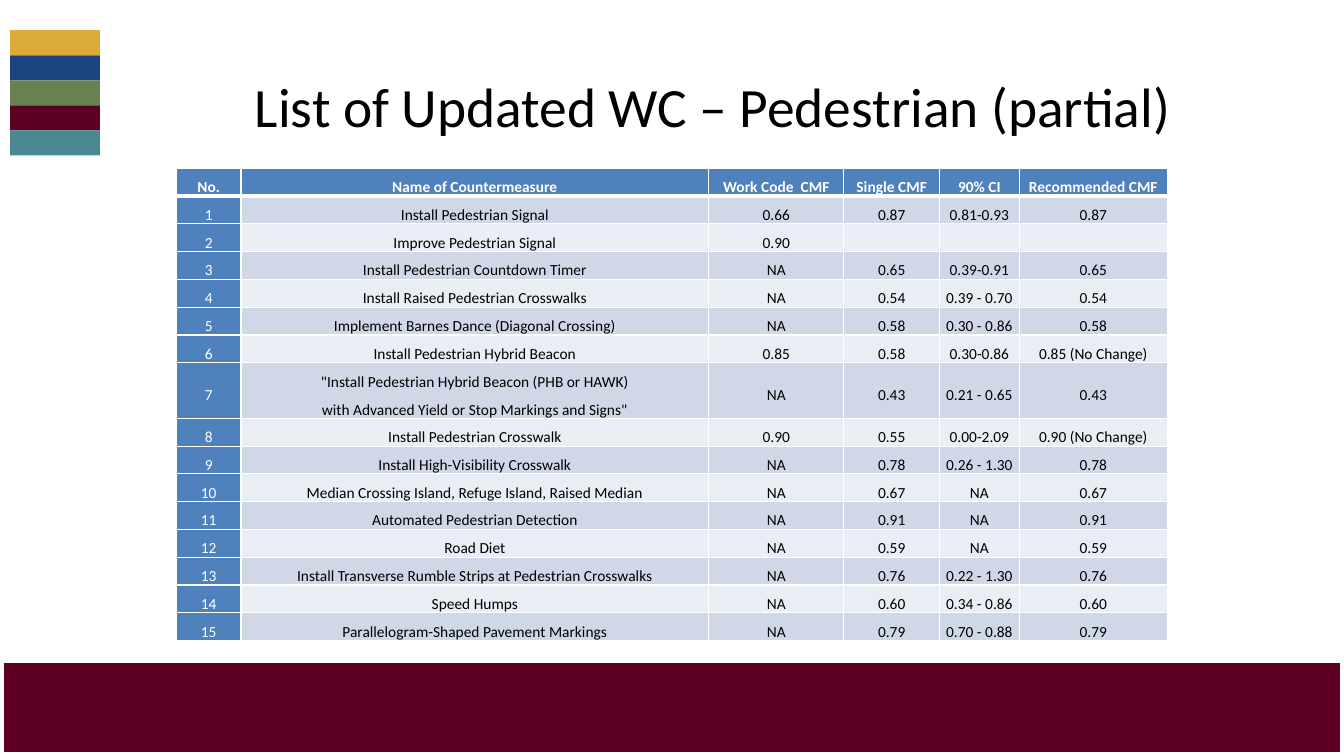
from typing import NamedTuple, Optional

from lxml import etree
from pptx import Presentation, util as u
from pptx.dml.color import RGBColor
from pptx.enum import shapes, text
from pptx.oxml import ns

WHITE = RGBColor(0xFF, 0xFF, 0xFF)
BLACK = RGBColor(0x00, 0x00, 0x00)
MAROON = RGBColor(0x5C, 0x00, 0x24)
GOLD = RGBColor(0xDD, 0xAB, 0x37)
NAVY = RGBColor(0x19, 0x44, 0x7E)
OLIVE = RGBColor(0x67, 0x82, 0x50)
TEAL = RGBColor(0x4B, 0x89, 0x92)
BLUE = RGBColor(0x4F, 0x81, 0xBD)
BAND_DARK = RGBColor(0xD0, 0xD8, 0xE8)
BAND_LIGHT = RGBColor(0xE9, 0xED, 0xF4)

FONT = "Calibri"
SLIDE_W, SLIDE_H = u.Inches(13.33), u.Inches(7.5)


class Box(NamedTuple):
    """A rectangle in percent of the slide's width and height."""
    left: float
    top: float
    width: float
    height: float

    def emu(self) -> tuple[int, int, int, int]:
        return (int(SLIDE_W * self.left / 100), int(SLIDE_H * self.top / 100),
                int(SLIDE_W * self.width / 100), int(SLIDE_H * self.height / 100))


class Countermeasure(NamedTuple):
    name: str
    work_code: str
    single: str = ""
    interval: str = ""
    recommended: str = ""


class Column(NamedTuple):
    heading: str
    weight: int


FRAME = Box(0, 0, 100, 100)
FOOTER = Box(0, 87.73, 100, 12)
FIRST_STRIPE = Box(0.75, 4, 6.68, 3.31)
TITLE = Box(16.88, 6.67, 72.32, 14.53)
TABLE = Box(13.13, 22.27, 73.74, 59.5)
STRIPES = (GOLD, NAVY, OLIVE, MAROON, TEAL)

COLUMNS = (
    Column("No.", 64),
    Column("Name of Countermeasure", 464),
    Column("Work Code  CMF", 134),
    Column("Single CMF", 95),
    Column("90% CI", 79),
    Column("Recommended CMF", 147),
)
COUNTERMEASURES = (
    Countermeasure("Install Pedestrian Signal", "0.66", "0.87", "0.81-0.93", "0.87"),
    Countermeasure("Improve Pedestrian Signal", "0.90"),
    Countermeasure("Install Pedestrian Countdown Timer", "NA", "0.65", "0.39-0.91", "0.65"),
    Countermeasure("Install Raised Pedestrian Crosswalks", "NA", "0.54", "0.39 - 0.70", "0.54"),
    Countermeasure("Implement Barnes Dance (Diagonal Crossing)", "NA", "0.58", "0.30 - 0.86", "0.58"),
    Countermeasure("Install Pedestrian Hybrid Beacon", "0.85", "0.58", "0.30-0.86", "0.85 (No Change)"),
    Countermeasure('"Install Pedestrian Hybrid Beacon (PHB or HAWK)\n'
                   'with Advanced Yield or Stop Markings and Signs"',
                   "NA", "0.43", "0.21 - 0.65", "0.43"),
    Countermeasure("Install Pedestrian Crosswalk", "0.90", "0.55", "0.00-2.09", "0.90 (No Change)"),
    Countermeasure("Install High-Visibility Crosswalk", "NA", "0.78", "0.26 - 1.30", "0.78"),
    Countermeasure("Median Crossing Island, Refuge Island, Raised Median", "NA", "0.67", "NA", "0.67"),
    Countermeasure("Automated Pedestrian Detection", "NA", "0.91", "NA", "0.91"),
    Countermeasure("Road Diet", "NA", "0.59", "NA", "0.59"),
    Countermeasure("Install Transverse Rumble Strips at Pedestrian Crosswalks",
                   "NA", "0.76", "0.22 - 1.30", "0.76"),
    Countermeasure("Speed Humps", "NA", "0.60", "0.34 - 0.86", "0.60"),
    Countermeasure("Parallelogram-Shaped Pavement Markings", "NA", "0.79", "0.70 - 0.88", "0.79"),
)


def add_rect(parent, box: Box, fill: Optional[RGBColor] = None) -> None:
    """Add a filled rectangle, or a white outline when no fill is given."""
    sp = parent.add_shape(shapes.MSO_SHAPE.RECTANGLE, *box.emu())
    sp.shadow.inherit = False
    if fill is None:
        sp.fill.background()
        sp.line.color.rgb = WHITE
        sp.line.width = u.Pt(6)
    else:
        sp.fill.solid()
        sp.fill.fore_color.rgb = fill
        sp.line.fill.background()


def style_paragraph(p, size: float, color: RGBColor, bold: bool = False) -> None:
    p.alignment = text.PP_ALIGN.CENTER
    p.font.name = FONT
    p.font.size = u.Pt(size)
    p.font.bold = bold
    p.font.color.rgb = color


def add_title(slide, title: str) -> None:
    tf = slide.shapes.add_textbox(*TITLE.emu()).text_frame
    tf.word_wrap = True
    tf.vertical_anchor = text.MSO_ANCHOR.MIDDLE
    tf.text = title
    style_paragraph(tf.paragraphs[0], 39.6, BLACK)


def add_borders(cell, top: float, bottom: float) -> None:
    """Give a cell white borders; widths in points, one point at the sides."""
    tc_pr = cell._tc.get_or_add_tcPr()
    for side, width in (("L", 1), ("R", 1), ("T", top), ("B", bottom)):
        ln = etree.SubElement(tc_pr, ns.qn(f"a:ln{side}"), w=str(u.Pt(width)))
        fill = etree.SubElement(ln, ns.qn("a:solidFill"))
        etree.SubElement(fill, ns.qn("a:srgbClr"), val=str(WHITE))


def fill_cell(cell, content: str, row: int, col: int) -> None:
    heading = row == 0
    on_blue = heading or col == 0
    add_borders(cell, top=3 if row == 1 else 1, bottom=3 if heading else 1)
    cell.fill.solid()
    cell.fill.fore_color.rgb = BLUE if on_blue else BAND_DARK if row % 2 else BAND_LIGHT
    cell.margin_left = cell.margin_right = u.Inches(0.03 if heading else 0.06)
    cell.margin_top = cell.margin_bottom = 0
    cell.vertical_anchor = text.MSO_ANCHOR.MIDDLE
    cell.text = content
    for p in cell.text_frame.paragraphs:
        p.line_spacing = 1.5
        style_paragraph(p, 11, WHITE if on_blue else BLACK, heading)
        if not content:
            p._p.get_or_add_endParaRPr().set("sz", "1100")


def add_countermeasure_table(slide) -> None:
    rows = [tuple(c.heading for c in COLUMNS)]
    rows += [(str(no), *item) for no, item in enumerate(COUNTERMEASURES, 1)]
    lines = [max(content.count("\n") + 1 for content in row) for row in rows]
    left, top, width, height = TABLE.emu()
    table = slide.shapes.add_table(len(rows), len(COLUMNS), left, top, width, height).table
    total_weight = sum(c.weight for c in COLUMNS)
    for column, spec_column in zip(table.columns, COLUMNS):
        column.width = width * spec_column.weight // total_weight
    for r, row in enumerate(rows):
        table.rows[r].height = height * lines[r] // sum(lines)
        for c, content in enumerate(row):
            fill_cell(table.cell(r, c), content, r, c)


def main() -> None:
    prs = Presentation()
    prs.slide_width, prs.slide_height = SLIDE_W, SLIDE_H
    slide = prs.slides.add_slide(prs.slide_layouts[6])
    add_rect(slide.shapes, FOOTER, MAROON)
    stripes = slide.shapes.add_group_shape().shapes
    for i, color in enumerate(STRIPES):
        stripe = FIRST_STRIPE._replace(top=FIRST_STRIPE.top + i * FIRST_STRIPE.height)
        add_rect(stripes, stripe, color)
    add_rect(slide.shapes, FRAME)
    add_title(slide, "List of Updated WC – Pedestrian (partial)")
    add_countermeasure_table(slide)
    prs.save("out.pptx")


if __name__ == "__main__":
    main()
